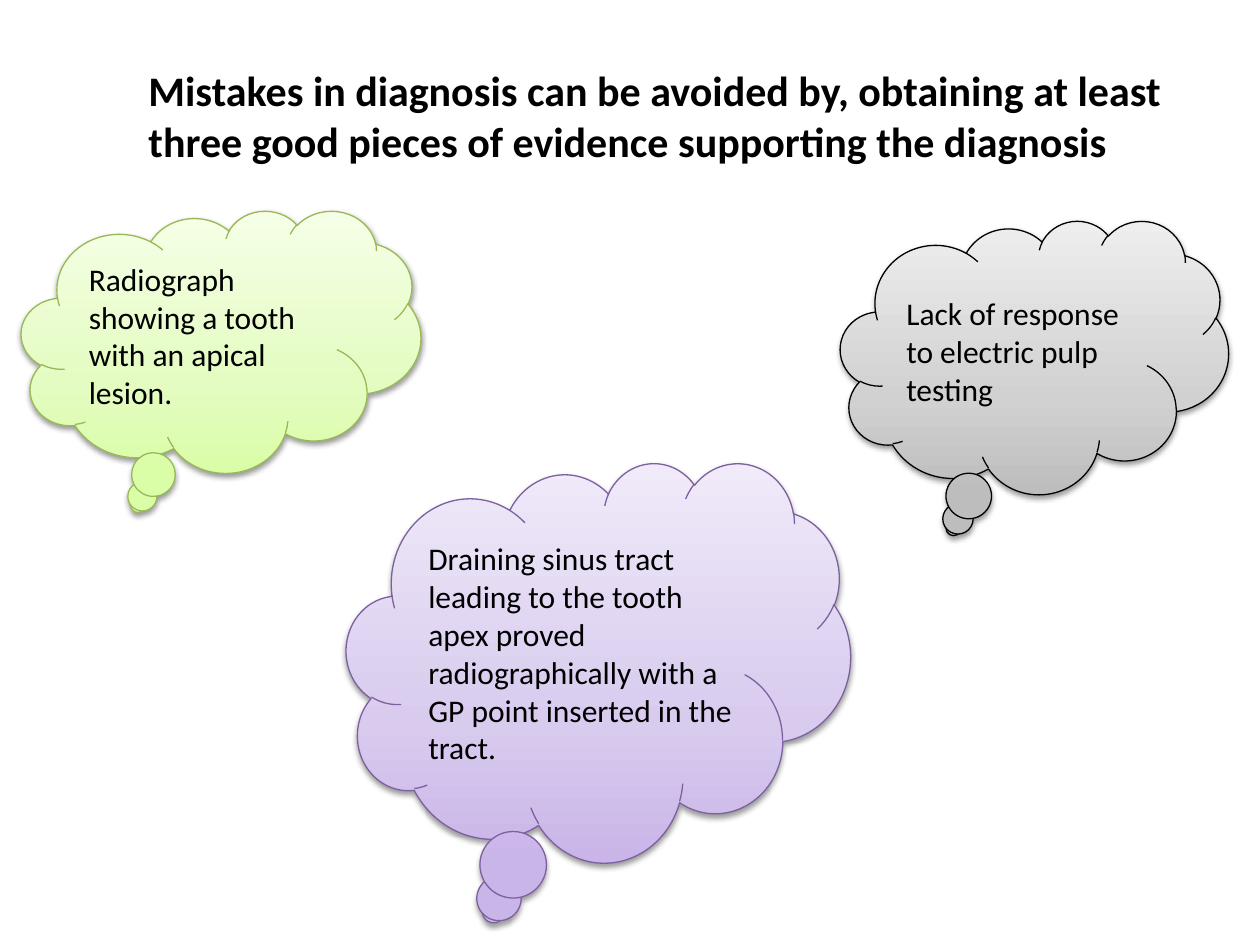
from copy import deepcopy
from pptx import Presentation
from pptx import util as u
from pptx.dml.color import RGBColor
from pptx.enum import shapes, text
from pptx.oxml import parse_xml
from pptx.oxml.ns import nsdecls, qn

BLACK = RGBColor(0, 0, 0)
GREEN_LINE = RGBColor(0x98, 0xB9, 0x55)
PURPLE_LINE = RGBColor(0x7D, 0x60, 0xA0)
GREENS = [RGBColor(0xDA, 0xFD, 0xA7), RGBColor(0xE4, 0xFC, 0xC2), RGBColor(0xF5, 0xFF, 0xE7)]
GREYS = [RGBColor(0xBD, 0xBD, 0xBD), RGBColor(0xD1, 0xD1, 0xD1), RGBColor(0xEE, 0xEE, 0xEE)]
PURPLES = [RGBColor(0xC9, 0xB5, 0xE8), RGBColor(0xD8, 0xCB, 0xEE), RGBColor(0xF0, 0xEA, 0xF9)]
STOPS = (0, 0.35, 1)

TITLE = ("Mistakes in diagnosis can be avoided by, obtaining at least "
         "three good pieces of evidence supporting the diagnosis")
CLOUDS = [
    ("Radiograph showing a tooth with an apical lesion.",
     (0.17, 1.67, 3.17, 2.08), GREENS, GREEN_LINE),
    ("Lack of response to electric pulp testing",
     (6.67, 1.75, 3.08, 2.17), GREYS, BLACK),
    ("Draining sinus tract leading to the tooth apex proved "
     "radiographically with a GP point inserted in the tract.",
     (2.75, 3.67, 4, 3.17), PURPLES, PURPLE_LINE),
]


def write(shape, words, size, bold=False):
    frame = shape.text_frame
    frame.word_wrap = True
    frame.vertical_anchor = text.MSO_ANCHOR.MIDDLE
    para = frame.paragraphs[0]
    para.text = words
    para.alignment = text.PP_ALIGN.LEFT
    para.font.name = "Calibri"
    para.font.size = u.Pt(size)
    para.font.bold = bold
    para.font.color.rgb = BLACK


def shade(shape, colours):
    shape.fill.gradient()
    shape.fill.gradient_angle = 90
    first = shape._element.spPr.find(qn("a:gradFill")).find(qn("a:gsLst"))[0]
    first.addnext(deepcopy(first))
    for stop, position, colour in zip(shape.fill.gradient_stops, STOPS, colours):
        stop.position = position
        stop.color.rgb = colour


def cast_shadow(shape):
    shape.shadow.inherit = False
    shape._element.spPr.find(qn("a:effectLst")).append(parse_xml(
        f'<a:outerShdw {nsdecls("a")} blurRad="{u.Pt(3.1)}" dist="{u.Pt(1.6)}" '
        'dir="5400000" rotWithShape="0"><a:srgbClr val="000000">'
        '<a:alpha val="38000"/></a:srgbClr></a:outerShdw>'))


def add_cloud(page, words, place, colours, line):
    cloud = page.shapes.add_shape(
        shapes.MSO_SHAPE.CLOUD_CALLOUT, *map(u.Inches, place))
    shade(cloud, colours)
    cloud.line.color.rgb = line
    cloud.line.width = u.Pt(0.75)
    cast_shadow(cloud)
    write(cloud, words, 18)


def main():
    deck = Presentation()
    deck.slide_width, deck.slide_height = u.Inches(10), u.Inches(7.5)
    page = deck.slides.add_slide(deck.slide_layouts[6])
    title = page.shapes.add_textbox(*map(u.Inches, (1.08, 0, 8.25, 1.83)))
    write(title, TITLE, 24, bold=True)
    for cloud in CLOUDS:
        add_cloud(page, *cloud)
    deck.save("out.pptx")


if __name__ == "__main__":
    main()
